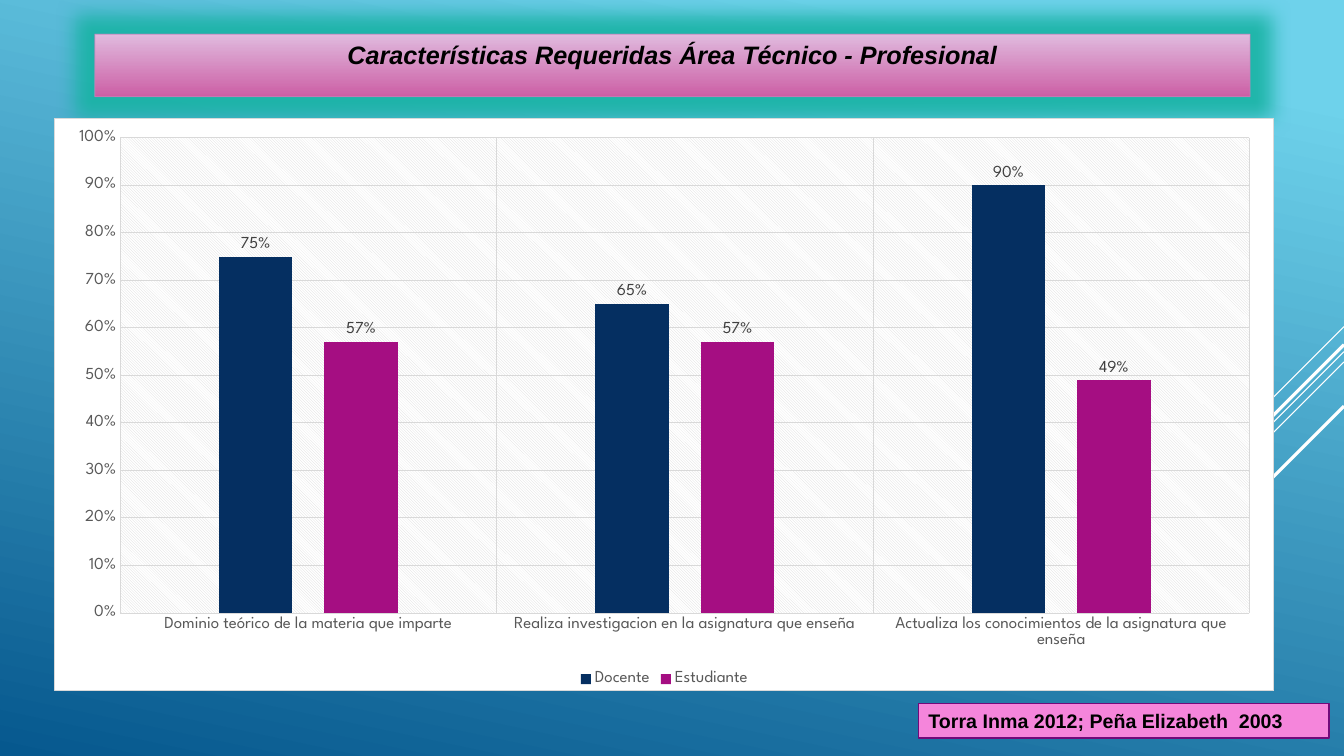
from lxml import etree
from pptx import Presentation
from pptx.chart.data import CategoryChartData
from pptx.dml.color import RGBColor
from pptx.enum.chart import XL_CHART_TYPE, XL_LABEL_POSITION, XL_LEGEND_POSITION, XL_TICK_MARK
from pptx.enum.shapes import MSO_CONNECTOR, MSO_SHAPE
from pptx.enum.text import MSO_ANCHOR, PP_ALIGN
from pptx.oxml import parse_xml
from pptx.oxml.ns import nsdecls, qn
from pptx.util import Inches, Pt

COLUMNS = XL_CHART_TYPE.COLUMN_CLUSTERED
OUTSIDE_END = XL_LABEL_POSITION.OUTSIDE_END
BOTTOM = XL_LEGEND_POSITION.BOTTOM
NO_TICK = XL_TICK_MARK.NONE
STRAIGHT = MSO_CONNECTOR.STRAIGHT
RECTANGLE = MSO_SHAPE.RECTANGLE
TOP = MSO_ANCHOR.TOP
MIDDLE = MSO_ANCHOR.MIDDLE
CENTER = PP_ALIGN.CENTER
JUSTIFY = PP_ALIGN.JUSTIFY
TITLE_ONLY = 5

COLORS = {
    "sky": "6ED2EB", "deep": "06588E", "white": "FFFFFF", "black": "000000",
    "rose": "E0BADE", "magenta": "CC5FA5", "mauve": "C089BD", "teal": "18B3A4",
    "pink": "F585DB", "purple": "710A7A", "grid": "D9D9D9", "axis": "595959",
    "label": "404040", "navy": "052F61", "plum": "A50E82",
}
HEADING_FONT = "Arial"
CHART_FONT = "League Spartan"

# Start height (% of slide height), run (% of slide width), weight
DIAGONALS = [(43.2, 7.5, 0.75), (46.53, 24.46, 0.75), (47.87, 15.53, 0.75),
             (45.6, 14.33, 2.25), (53.73, 10.43, 2.25)]

CATEGORIES = ["Dominio teórico de la materia que imparte",
              "Realiza investigacion en la asignatura que enseña",
              "Actualiza los conocimientos de la asignatura que enseña"]
SERIES = [("Docente", (0.75, 0.65, 0.9), "navy"),
          ("Estudiante", (0.57, 0.57, 0.49), "plum")]


class SlideBuilder:
    """Places styled elements; boxes are percentages of the slide's size."""

    def __init__(self, presentation):
        self.width = presentation.slide_width
        self.height = presentation.slide_height
        self.slide = presentation.slides.add_slide(presentation.slide_layouts[TITLE_ONLY])

    def x(self, share):
        return round(self.width * share / 100)

    def y(self, share):
        return round(self.height * share / 100)

    def box(self, left, top, width, height):
        return self.x(left), self.y(top), self.x(width), self.y(height)

    @staticmethod
    def color(name):
        return RGBColor.from_string(COLORS[name])

    @staticmethod
    def apply(target, values):
        for name, value in values.items():
            setattr(target, name, value)

    def font(self, font, color, **values):
        self.apply(font, values)
        font.color.rgb = self.color(color)

    def fill(self, fill, color):
        fill.solid()
        fill.fore_color.rgb = self.color(color)

    def line(self, line, color, weight):
        line.color.rgb = self.color(color)
        line.width = Pt(weight)

    def gradient(self, fill, stops, angle):
        fill.gradient()
        fill.gradient_angle = 360 - angle
        for stop, (position, color) in zip(fill.gradient_stops, stops):
            stop.position = position
            stop.color.rgb = self.color(color)

    def label(self, shape, text, alignment, anchor, **values):
        frame = shape.text_frame
        self.apply(frame, {"text": text, "word_wrap": True, "vertical_anchor": anchor})
        paragraph = frame.paragraphs[0]
        paragraph.alignment = alignment
        self.font(paragraph.runs[0].font, "black", name=HEADING_FONT, bold=True, **values)

    def background(self):
        self.gradient(self.slide.background.fill, [(0.1, "sky"), (1, "deep")], 102)

    def diagonal(self, top, run, weight):
        drop = self.x(run)
        connector = self.slide.shapes.add_connector(
            STRAIGHT, self.width, self.y(top), self.width - drop, self.y(top) + drop)
        self.line(connector.line, "white", weight)
        etree.SubElement(connector._element.spPr, qn("a:effectLst"))

    def title(self, text, box):
        title = self.slide.shapes.title
        self.apply(title, dict(zip(("left", "top", "width", "height"), self.box(*box))))
        self.gradient(title.fill, [(0, "rose"), (1, "magenta")], 90)
        self.line(title.line, "mauve", 0.75)
        border = title._element.spPr.find(".//" + qn("a:ln")).find(".//" + qn("a:srgbClr"))
        etree.SubElement(border, qn("a:alpha"), val="60000")
        title._element.spPr.append(parse_xml(
            f'<a:effectLst {nsdecls("a")}><a:glow rad="{Inches(0.4)}">'
            f'<a:srgbClr val="{COLORS["teal"]}"><a:alpha val="90000"/></a:srgbClr>'
            '</a:glow></a:effectLst>'))
        self.label(title, text, CENTER, TOP, size=Pt(18), italic=True)

    def citation(self, text, box):
        shape = self.slide.shapes.add_shape(RECTANGLE, *self.box(*box))
        shape.shadow.inherit = False
        self.fill(shape.fill, "pink")
        self.line(shape.line, "purple", 1.25)
        self.label(shape, text, JUSTIFY, MIDDLE, size=Pt(14))

    def chart(self, box):
        data = CategoryChartData(number_format="0%")
        data.categories = CATEGORIES
        for name, values, _ in SERIES:
            data.add_series(name, values)
        chart = self.slide.shapes.add_chart(COLUMNS, *self.box(*box), data).chart
        text = {"name": CHART_FONT, "size": Pt(12), "bold": False}
        self.font(chart.font, "axis", **text)
        self.apply(chart, {"has_title": False, "has_legend": True})
        self.apply(chart.legend, {"position": BOTTOM, "include_in_layout": False})
        self.font(chart.legend.font, "axis", **text)

        # Axes and gridlines
        for axis in (chart.category_axis, chart.value_axis):
            self.apply(axis, {"major_tick_mark": NO_TICK, "minor_tick_mark": NO_TICK,
                              "has_major_gridlines": True})
            self.line(axis.major_gridlines.format.line, "grid", 0.75)
            self.font(axis.tick_labels.font, "axis", **text)
        self.line(chart.category_axis.format.line, "grid", 0.75)
        chart.value_axis.format.line.fill.background()
        self.apply(chart.value_axis, {"minimum_scale": 0, "maximum_scale": 1, "major_unit": 0.1})
        percent = {"number_format": "0%", "number_format_is_linked": False}
        self.apply(chart.value_axis.tick_labels, percent)

        # Columns and their labels
        plot = chart.plots[0]
        self.apply(plot, {"gap_width": 267, "overlap": -43, "vary_by_categories": False})
        for series, (_, _, color) in zip(plot.series, SERIES):
            self.fill(series.format.fill, color)
            labels = series.data_labels
            self.apply(labels, {"show_value": True, "position": OUTSIDE_END, **percent})
            self.font(labels.font, "label", **text)
        self.chart_areas(chart)

    @staticmethod
    def chart_areas(chart):
        def solid(color):
            return f'<a:solidFill><a:srgbClr val="{COLORS[color]}"/></a:solidFill>'

        def properties(content):
            return parse_xml(f'<c:spPr {nsdecls("c", "a")}>{content}</c:spPr>')

        chart_element = chart._chartSpace.find(qn("c:chart"))
        chart_element.addnext(properties(
            solid("white") + f'<a:ln w="{Pt(0.75)}">{solid("grid")}</a:ln>'))
        chart_element.find(qn("c:plotArea")).append(properties(
            '<a:pattFill prst="ltDnDiag">'
            f'<a:fgClr><a:srgbClr val="{COLORS["grid"]}"/></a:fgClr>'
            f'<a:bgClr><a:srgbClr val="{COLORS["white"]}"/></a:bgClr>'
            '</a:pattFill><a:ln><a:noFill/></a:ln>'))


def main():
    presentation = Presentation()
    presentation.slide_width = Inches(13.33)
    presentation.slide_height = Inches(7.5)
    builder = SlideBuilder(presentation)

    # Backdrop
    builder.background()
    for diagonal in DIAGONALS:
        builder.diagonal(*diagonal)

    # Content
    builder.title("Características Requeridas Área Técnico - Profesional",
                  (7.05, 4.53, 85.97, 8.27))
    builder.citation("Torra Inma 2012; Peña Elizabeth  2003", (68.34, 93.07, 30.53, 4.53))
    builder.chart((4.05, 15.6, 90.77, 75.87))
    presentation.save("out.pptx")


if __name__ == "__main__":
    main()
